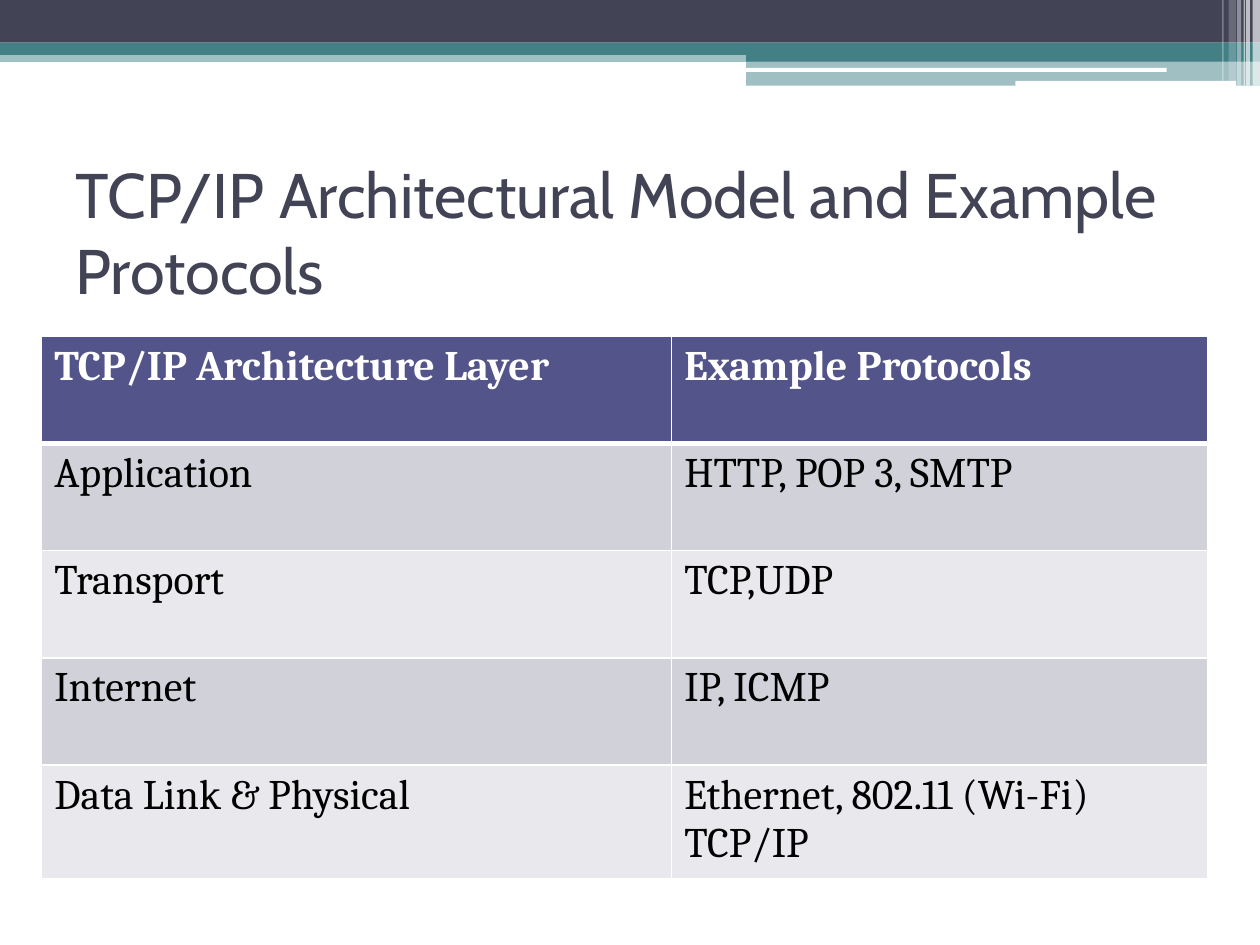
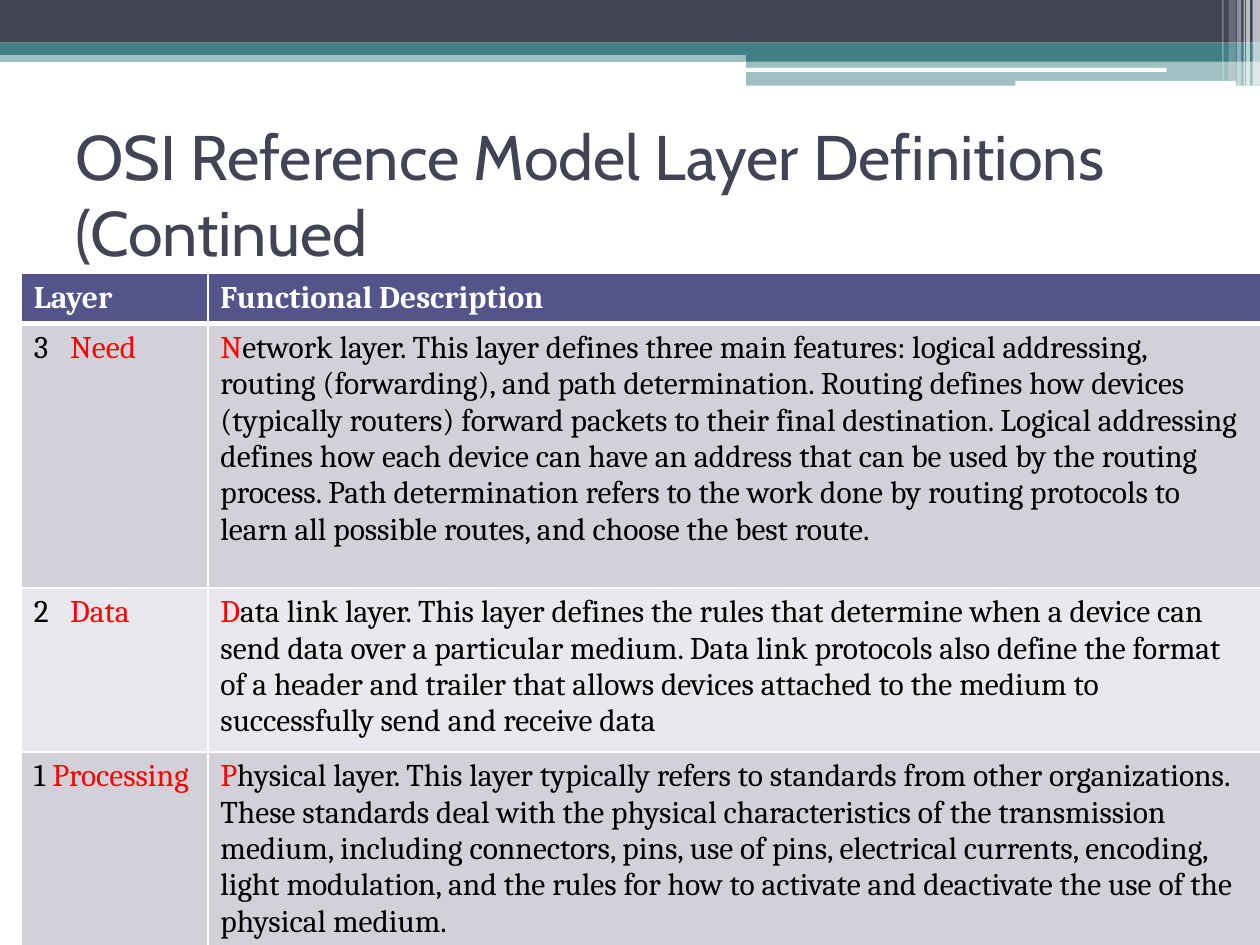
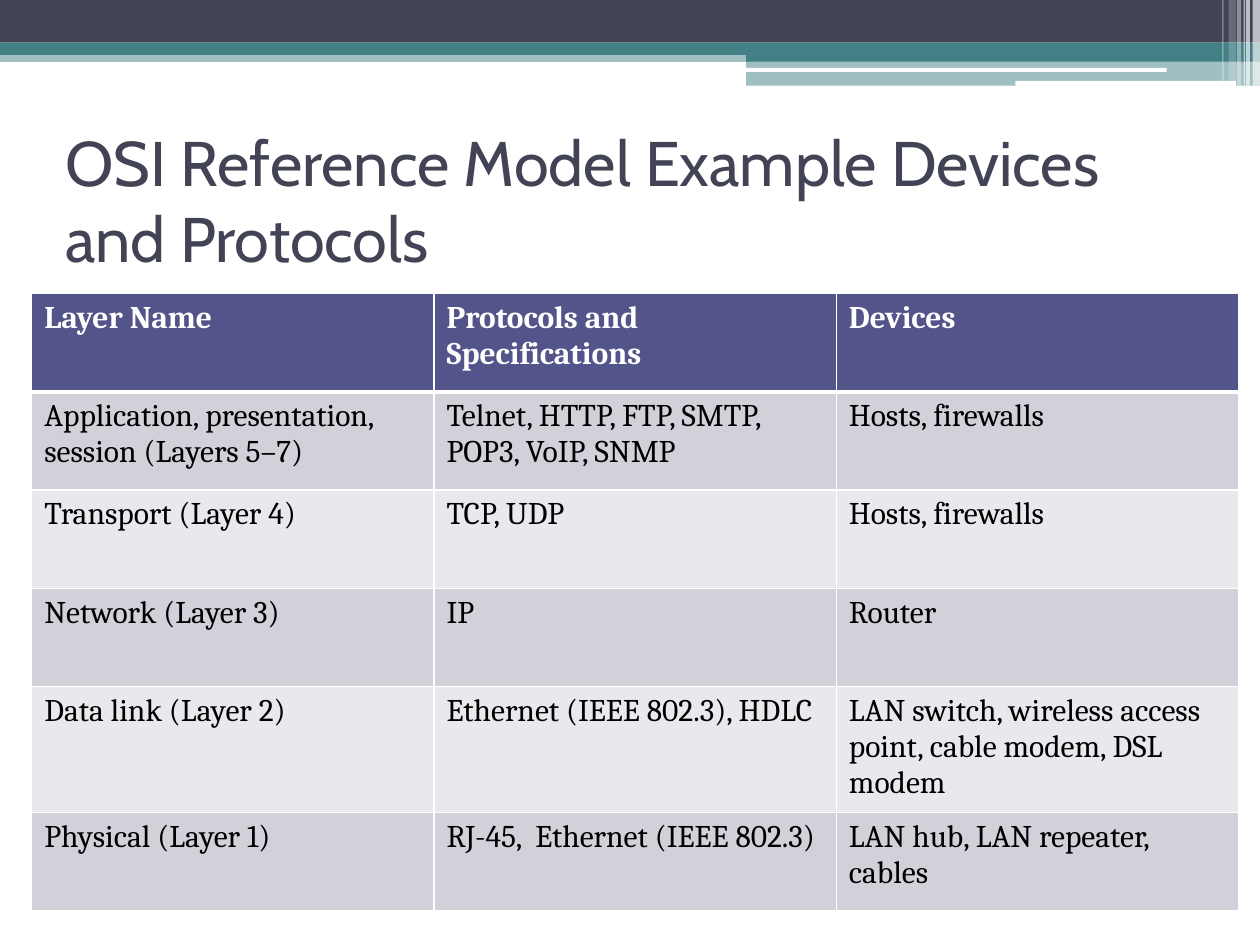
from typing import NamedTuple

from lxml import etree
from pptx import Presentation
from pptx.dml.color import RGBColor
from pptx.enum.shapes import MSO_SHAPE
from pptx.enum.text import MSO_ANCHOR
from pptx.oxml.ns import qn
from pptx.util import Cm, Pt

RECT = MSO_SHAPE.RECTANGLE
ROUNDED = MSO_SHAPE.ROUNDED_RECTANGLE
MIDDLE = MSO_ANCHOR.MIDDLE

NAVY = "424456"
TEAL = "438086"
INDIGO = "53548A"
WHITE = "FFFFFF"
BLACK = "000000"
RED = "FF0000"
ROW_FILLS = ("E9E9ED", "D1D1DA")

TITLE_FONT = "Cabin"
TABLE_FONT = "Cambria"
TITLE_SIZE = 36
SLIDE_WIDTH, SLIDE_HEIGHT = 25.4, 19.05
TITLE_WIDTH, TITLE_HEIGHT = 22.86, 2.97
INSET = 0.13
LAYER_TAB = 0.73


class Band(NamedTuple):
    left: float
    top: float
    width: float
    height: float
    color: str
    opacity: int = 100
    outline: MSO_SHAPE = RECT


class Mnemonic(NamedTuple):
    before: str
    letters: str
    after: str = ""


Cell = str | Mnemonic


class Title(NamedTuple):
    text: str
    left: float = 1.27
    top: float = 3.18
    bottom_inset: float = INSET


class Grid(NamedTuple):
    left: float
    top: float
    columns: list[float]
    heights: list[float]
    size: int
    rows: list[list[Cell]]


class Page(NamedTuple):
    title: Title
    grid: Grid


BANDS = [
    Band(0, 1.02, SLIDE_WIDTH, 0.23, TEAL, 50),
    Band(0, 0, SLIDE_WIDTH, 0.86, NAVY),
    Band(0, 0.86, SLIDE_WIDTH, 0.25, TEAL),
    Band(15.04, 0.99, 10.36, 0.25, TEAL),
    Band(15.04, 1.22, 10.36, 0.51, TEAL, 50),
    Band(15.01, 1.37, 8.51, 0.08, WHITE, outline=ROUNDED),
    Band(20.47, 1.63, 4.45, 0.1, WHITE, outline=ROUNDED),
    Band(25.25, 0, 0.15, 1.73, WHITE, 65),
    Band(25.12, 0, 0.08, 1.73, WHITE, 65),
    Band(25.07, 0, 0.03, 1.73, WHITE, 60),
    Band(24.94, 0, 0.08, 1.73, WHITE, 40),
    Band(24.77, 0, 0.15, 1.63, WHITE, 20),
    Band(24.64, 0, 0.03, 1.63, WHITE, 30),
]

PAGES = [
    Page(
        Title("TCP/IP Architectural Model and Example Protocols"),
        Grid(0.84, 6.78, [12.7, 10.8], [2.16] * 5, 24, [
            ["TCP/IP Architecture Layer", "Example Protocols"],
            ["Application", "HTTP, POP 3, SMTP"],
            ["Transport", "TCP,UDP"],
            ["Internet", "IP, ICMP"],
            ["Data Link & Physical", "Ethernet, 802.11 (Wi-Fi)\nTCP/IP"],
        ]),
    ),
    Page(
        Title("OSI Reference Model Layer Definitions (Continued", bottom_inset=1.65),
        Grid(0.43, 5.51, [3.76, 21.23], [0.99, 5.33, 3.15, 3.86], 18, [
            ["Layer", "Functional Description"],
            [
                Mnemonic("3\t", "Need"),
                Mnemonic("", "N", "etwork layer. This layer defines three main features: "
                         "logical addressing, routing (forwarding), and path determination. "
                         "Routing defines how devices (typically routers) forward packets to "
                         "their final destination. Logical addressing defines how each device "
                         "can have an address that can be used by the routing process. Path "
                         "determination refers to the work done by routing protocols to learn "
                         "all possible routes, and choose the best route."),
            ],
            [
                Mnemonic("2\t", "Data"),
                Mnemonic("", "D", "ata link layer. This layer defines the rules that determine "
                         "when a device can send data over a particular medium. Data link "
                         "protocols also define the format of a header and trailer that allows "
                         "devices attached to the medium to successfully send and receive data"),
            ],
            [
                Mnemonic("1 ", "Processing"),
                Mnemonic("", "P", "hysical layer. This layer typically refers to standards from "
                         "other organizations. These standards deal with the physical "
                         "characteristics of the transmission medium, including connectors, "
                         "pins, use of pins, electrical currents, encoding, light modulation, "
                         "and the rules for how to activate and deactivate the use of the "
                         "physical medium."),
            ],
        ]),
    ),
    Page(
        Title("OSI Reference Model Example Devices and Protocols", 1.07, 2.54),
        Grid(0.64, 5.92, [8.11] * 3, [1.98] * 4 + [2.41, 1.98], 18, [
            ["Layer Name", "Protocols and Specifications", "Devices"],
            ["Application, presentation, session (Layers 5–7)",
             "Telnet, HTTP, FTP, SMTP, POP3, VoIP, SNMP", "Hosts, firewalls"],
            ["Transport (Layer 4)", "TCP, UDP", "Hosts, firewalls"],
            ["Network (Layer 3)", "IP", "Router"],
            ["Data link (Layer 2)", "Ethernet (IEEE 802.3), HDLC",
             "LAN switch, wireless access point, cable modem, DSL modem"],
            ["Physical (Layer 1)", "RJ-45,  Ethernet (IEEE 802.3)",
             "LAN hub, LAN repeater, cables"],
        ]),
    ),
]


def rgb(color: str) -> RGBColor:
    return RGBColor.from_string(color)


def set_font(paragraph, name: str, size: int, color: str, bold: bool = False) -> None:
    font = paragraph.font
    font.name, font.size, font.bold = name, Pt(size), bold
    font.color.rgb = rgb(color)


def draw_band(slide, band: Band) -> None:
    shape = slide.shapes.add_shape(
        band.outline, Cm(band.left), Cm(band.top), Cm(band.width), Cm(band.height))
    shape.shadow.inherit = False
    shape.line.fill.background()
    shape.fill.solid()
    shape.fill.fore_color.rgb = rgb(band.color)
    if band.opacity < 100:
        tint = shape.fill._xPr.find(".//" + qn("a:srgbClr"))
        etree.SubElement(tint, qn("a:alpha"), val=str(band.opacity * 1000))


def draw_title(slide, title: Title) -> None:
    frame = slide.shapes.add_textbox(
        Cm(title.left), Cm(title.top), Cm(TITLE_WIDTH), Cm(TITLE_HEIGHT)).text_frame
    frame.word_wrap = True
    frame.vertical_anchor = MIDDLE
    frame.margin_bottom = Cm(title.bottom_inset)
    heading = frame.paragraphs[0]
    heading.text = title.text
    set_font(heading, TITLE_FONT, TITLE_SIZE, NAVY)


def add_tab_stop(paragraph) -> None:
    stops = etree.Element(qn("a:tabLst"))
    etree.SubElement(stops, qn("a:tab"), pos=str(Cm(LAYER_TAB)), algn="l")
    paragraph._p.get_or_add_pPr().insert(0, stops)


def write_mnemonic(paragraph, mnemonic: Mnemonic) -> None:
    for part in mnemonic:
        if part:
            run = paragraph.add_run()
            run.text = part
            if part is mnemonic.letters:
                run.font.color.rgb = rgb(RED)
    if "\t" in mnemonic.before:
        add_tab_stop(paragraph)


def set_borders(cell, row: int) -> None:
    widths = {"a:lnL": 1, "a:lnR": 1,
              "a:lnT": 3 if row == 1 else 1, "a:lnB": 3 if row == 0 else 1}
    properties = cell._tc.get_or_add_tcPr()
    for position, (side, width) in enumerate(widths.items()):
        border = etree.Element(qn(side), w=str(Pt(width)))
        fill = etree.SubElement(border, qn("a:solidFill"))
        etree.SubElement(fill, qn("a:srgbClr"), val=WHITE)
        properties.insert(position, border)


def fill_cell(cell, content: Cell, row: int, size: int) -> None:
    header = row == 0
    frame = cell.text_frame
    if isinstance(content, Mnemonic):
        write_mnemonic(frame.paragraphs[0], content)
    else:
        frame.text = content
    for paragraph in frame.paragraphs:
        set_font(paragraph, TABLE_FONT, size, WHITE if header else BLACK, header)
    cell.fill.solid()
    cell.fill.fore_color.rgb = rgb(INDIGO if header else ROW_FILLS[row % 2])
    set_borders(cell, row)


def draw_grid(slide, grid: Grid) -> None:
    table = slide.shapes.add_table(
        len(grid.rows), len(grid.columns), Cm(grid.left), Cm(grid.top),
        Cm(sum(grid.columns)), Cm(sum(grid.heights))).table
    for column, width in zip(table.columns, grid.columns):
        column.width = Cm(width)
    for row, (contents, height) in enumerate(zip(grid.rows, grid.heights)):
        table.rows[row].height = Cm(height)
        for column, content in enumerate(contents):
            fill_cell(table.cell(row, column), content, row, grid.size)


def main() -> None:
    deck = Presentation()
    deck.slide_width, deck.slide_height = Cm(SLIDE_WIDTH), Cm(SLIDE_HEIGHT)
    blank = deck.slide_layouts[6]
    for page in PAGES:
        slide = deck.slides.add_slide(blank)
        for band in BANDS:
            draw_band(slide, band)
        draw_title(slide, page.title)
        draw_grid(slide, page.grid)
    deck.save("out.pptx")


if __name__ == "__main__":
    main()
